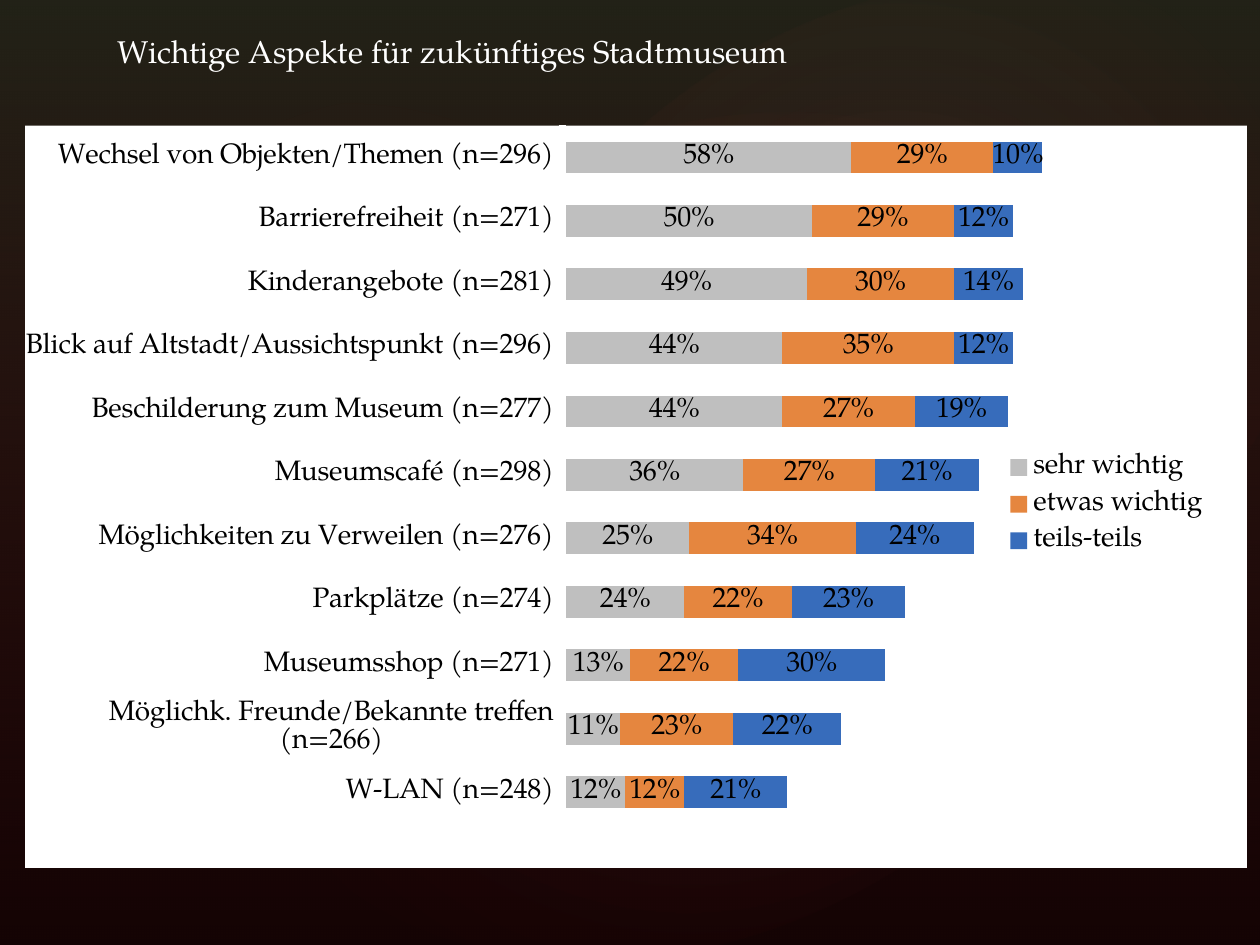
from lxml import etree
from pptx import Presentation
from pptx import util as u
from pptx.chart import data
from pptx.dml import color
from pptx.enum import chart as ch, shapes
from pptx.oxml import ns

PX = 914400 / 126
FONT = "TeX Gyre Pagella"
COLORS = {
    "black": "000000", "white": "FFFFFF", "olive": "616042", "red": "D1282E",
    "sand": "D2D1BE", "grey": "BFBFBF", "orange": "E5863F", "blue": "376CBB",
}
ASPECTS = [
    ("Wechsel von Objekten/Themen (n=296)", 0.58, 0.29, 0.10),
    ("Barrierefreiheit (n=271)", 0.50, 0.29, 0.12),
    ("Kinderangebote (n=281)", 0.49, 0.30, 0.14),
    ("Blick auf Altstadt/Aussichtspunkt (n=296)", 0.44, 0.35, 0.12),
    ("Beschilderung zum Museum (n=277)", 0.44, 0.27, 0.19),
    ("Museumscafé (n=298)", 0.36, 0.27, 0.21),
    ("Möglichkeiten zu Verweilen (n=276)", 0.25, 0.34, 0.24),
    ("Parkplätze (n=274)", 0.24, 0.22, 0.23),
    ("Museumsshop (n=271)", 0.13, 0.22, 0.30),
    ("Möglichk. Freunde/Bekannte treffen (n=266)", 0.11, 0.23, 0.22),
    ("W-LAN (n=248)", 0.12, 0.12, 0.21),
]
RATINGS = [("sehr wichtig", "grey"), ("etwas wichtig", "orange"), ("teils-teils", "blue")]
GLOWS = [
    ((189, 144, 998, 786), 328.7, 7),
    ((-38, 161, 764, 617), 294.3, 8),
    ((451, 16, 893, 655), 328.7, 8),
]


def px(*lengths):
    return [u.Emu(round(length * PX)) for length in lengths]


def rgb(name):
    return color.RGBColor.from_string(COLORS[name])


def paint(fill, name):
    fill.solid()
    fill.fore_color.rgb = rgb(name)


def style(font, size, name):
    font.name = FONT
    font.size = u.Pt(size)
    font.color.rgb = rgb(name)


def child(parent, tag, **attributes):
    element = etree.SubElement(parent, ns.qn(tag))
    for key, value in attributes.items():
        element.set(key, str(value))
    return element


def add_gradient(slide, kind, frame, stops, rotation=0, radial=False):
    shape = slide.shapes.add_shape(kind, *px(*frame))
    shape.rotation = rotation
    shape.shadow.inherit = False
    shape.line.fill.background()
    shape.fill.background()
    old = shape.fill._xPr.find(ns.qn("a:noFill"))
    gradient = etree.Element(ns.qn("a:gradFill"), rotWithShape="1")
    old.getparent().replace(old, gradient)
    stop_list = child(gradient, "a:gsLst")
    for position, name, alpha in stops:
        stop = child(stop_list, "a:gs", pos=position * 1000)
        child(child(stop, "a:srgbClr", val=COLORS[name]), "a:alpha", val=alpha * 1000)
    if radial:
        circle = child(gradient, "a:path", path="circle")
        child(circle, "a:fillToRect", **dict.fromkeys("ltrb", 50000))
    else:
        child(gradient, "a:lin", ang=90 * 60000, scaled=0)


def add_title(slide, frame, words):
    box = slide.shapes.add_textbox(*px(*frame))
    box.text_frame.word_wrap = True
    span = box.text_frame.paragraphs[0].add_run()
    span.text = words
    style(span.font, 18, "white")


def set_layout(parent, x, y, w, h, inner=False):
    for old in parent.findall(ns.qn("c:layout")):
        parent.remove(old)
    layout = etree.Element(ns.qn("c:layout"))
    manual = child(layout, "c:manualLayout")
    if inner:
        child(manual, "c:layoutTarget", val="inner")
    for tag in ("c:xMode", "c:yMode"):
        child(manual, tag, val="edge")
    for tag, value in (("c:x", x), ("c:y", y), ("c:w", w), ("c:h", h)):
        child(manual, tag, val=value)
    position = parent.find(ns.qn("c:legendPos"))
    if position is None:
        parent.insert(0, layout)
    else:
        position.addnext(layout)


def fill_chart_area(chart, name):
    space = chart._chartSpace
    properties = etree.Element(ns.qn("c:spPr"))
    child(child(properties, "a:solidFill"), "a:srgbClr", val=COLORS[name])
    child(child(properties, "a:ln"), "a:noFill")
    space.find(ns.qn("c:chart")).addnext(properties)


def style_axes(chart):
    categories = chart.category_axis
    categories.reverse_order = True
    categories.has_major_gridlines = False
    categories.major_tick_mark = ch.XL_TICK_MARK.OUTSIDE
    categories.format.line.color.rgb = rgb("white")
    values = chart.value_axis
    values.minimum_scale, values.maximum_scale = 0, 1.2
    values.has_major_gridlines = False
    values.visible = False


def style_series(series, name):
    paint(series.format.fill, name)
    labels = series.data_labels
    labels.show_value = True
    labels.number_format = "0%"
    labels.number_format_is_linked = False
    labels.position = ch.XL_LABEL_POSITION.CENTER
    style(labels.font, 16, "black")


def add_ratings_chart(slide, frame):
    names, *columns = zip(*ASPECTS)
    table = data.CategoryChartData(number_format="0%")
    table.categories = names
    for (rating, _), column in zip(RATINGS, columns):
        table.add_series(rating, column)
    chart = slide.shapes.add_chart(ch.XL_CHART_TYPE.BAR_STACKED, *px(*frame), table).chart
    chart.has_title = False
    style(chart.font, 16, "black")
    fill_chart_area(chart, "white")
    style_axes(chart)
    plot = chart.plots[0]
    plot.gap_width, plot.overlap = 100, 100
    plot.vary_by_categories = False
    for series, (_, name) in zip(plot.series, RATINGS):
        style_series(series, name)
    chart.has_legend = True
    chart.legend.position = ch.XL_LEGEND_POSITION.RIGHT
    chart.legend.include_in_layout = False
    style(chart.legend.font, 16, "black")
    set_layout(chart.legend._element, 0.8, 0.43, 0.17, 0.16)
    set_layout(chart._chartSpace.chart.plotArea, 0.443, 0, 0.482, 0.941, inner=True)


def main():
    deck = Presentation()
    deck.slide_width, deck.slide_height = px(1260, 945)
    page = deck.slides.add_slide(deck.slide_layouts[6])
    paint(page.background.fill, "black")
    add_gradient(page, shapes.MSO_SHAPE.RECTANGLE, (0, 0, 1260, 945),
                 [(0, "olive", 36), (100, "red", 10)])
    for frame, rotation, alpha in GLOWS:
        add_gradient(page, shapes.MSO_SHAPE.OVAL, frame,
                     [(0, "sand", alpha), (58, "red", 0)], rotation, radial=True)
    add_ratings_chart(page, (25, 125, 1222, 743))
    add_title(page, (105, 26, 873, 89), "Wichtige Aspekte für zukünftiges Stadtmuseum")
    deck.save("out.pptx")


if __name__ == "__main__":
    main()
